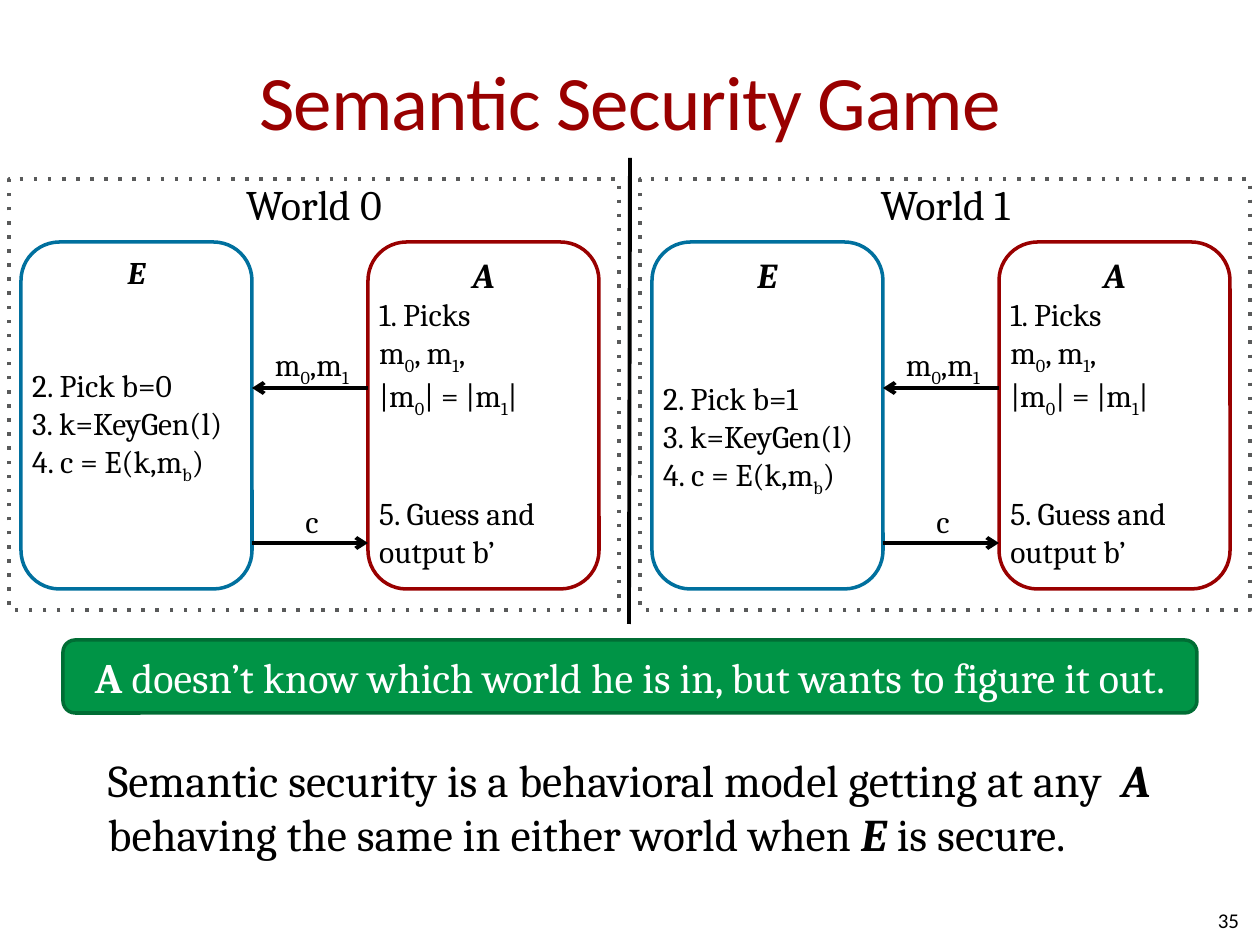
import pptx
import pptx.util
import pptx.dml.color
import pptx.enum.shapes
import pptx.enum.text
import pptx.oxml
import pptx.oxml.ns

SCALE = 914400 / 126
SIZE = (1260, 945)
SHAPE = pptx.enum.shapes.MSO_SHAPE
ALIGN = pptx.enum.text.PP_ALIGN
ANCHOR = pptx.enum.text.MSO_ANCHOR
LEFT, MID, RIGHT = ALIGN.LEFT, ALIGN.CENTER, ALIGN.RIGHT

BLACK, RED, BLUE, GRAY = "000000", "990000", "00709E", "595A5A"
GREEN, EDGE, WHITE = "009446", "006D34", "FFFFFF"

TITLE = "Semantic Security Game"
CLAIM = "*A* doesn’t know which world he is in, but wants to figure it out."
MODEL = ("Semantic security is a behavioral model getting at any  *A* "
         "behaving the same in either world when *E* is secure.")
NUMBER = "35"

# Marks: _subscript_ and *bold italic*.
WORLDS = [
    dict(name="World 0", bit="2. Pick b=0", size=18, gap=43),
    dict(name="World 1", bit="2. Pick b=1", size=20, gap=48),
]
STEPS = ["3. k=KeyGen(l)", "4. c = E(k,m_b_)"]
PICKS = "1. Picks\nm_0_, m_1_,\n|m_0_| = |m_1_|"
GUESS = "5. Guess and output b’"
PAIR, CIPHER = "m_0_,m_1_", "c"

STEP = 631
FRAME = (9, 179, 610, 431)
BOX_E = (21, 242, 231, 347)
BOX_A = (368, 242, 231, 347)
SEND, REPLY = 388, 543


def px(n):
    return pptx.util.Emu(round(n * SCALE))


def rgb(code):
    return pptx.dml.color.RGBColor.from_string(code)


def node(tag):
    return pptx.oxml.parse_xml(f"<a:{tag} {pptx.oxml.ns.nsdecls('a')}/>")


def detail(shape, tag, key, val):
    item = node(tag)
    item.set(key, val)
    shape._element.spPr.find(pptx.oxml.ns.qn("a:ln")).append(item)


def add_runs(para, text, size, color, font):
    for i, part in enumerate(text.split("_")):
        for j, bit in enumerate(part.split("*")):
            for k, row in enumerate(bit.split("\n")):
                if k:
                    para.add_line_break()
                if not row:
                    continue
                run = para.add_run()
                run.text = row
                run.font.name = font
                run.font.size = pptx.util.Pt(size)
                run.font.color.rgb = rgb(color)
                run.font.bold = run.font.italic = j % 2 == 1
                if i % 2:
                    run.font._element.set("baseline", "-25000")


def put(shape, rows, color=BLACK, font="Cambria", anchor=ANCHOR.TOP,
        inset=(0, 0), wrap=True):
    frame = shape.text_frame
    frame.word_wrap = wrap
    frame.vertical_anchor = anchor
    frame.margin_left = frame.margin_right = px(inset[0])
    frame.margin_top = frame.margin_bottom = px(inset[1])
    for n, (text, size, align, gap) in enumerate(rows):
        para = frame.add_paragraph() if n else frame.paragraphs[0]
        para.alignment = align
        para.space_before = pptx.util.Pt(gap)
        add_runs(para, text, size, color, font)
    return frame


def add_box(slide, kind, area, edge, fill=None):
    box = slide.shapes.add_shape(kind, *map(px, area))
    box.shadow.inherit = False
    if fill:
        box.fill.solid()
        box.fill.fore_color.rgb = rgb(fill)
    else:
        box.fill.background()
    box.line.color.rgb = rgb(edge)
    box.line.width = pptx.util.Pt(2)
    return box


def add_text(slide, area, rows, **opts):
    return put(slide.shapes.add_textbox(*map(px, area)), rows, **opts)


def add_line(slide, x1, y1, x2, y2, arrow=True):
    line = slide.shapes.add_connector(
        pptx.enum.shapes.MSO_CONNECTOR.STRAIGHT, *map(px, (x1, y1, x2, y2)))
    line.line.color.rgb = rgb(BLACK)
    line.line.width = pptx.util.Pt(2.25)
    if arrow:
        detail(line, "tailEnd", "type", "arrow")
    line._element.spPr.append(node("effectLst"))


def add_world(slide, world, dx):
    def move(area):
        return (area[0] + dx, *area[1:])

    box = add_box(slide, SHAPE.ROUNDED_RECTANGLE, move(BOX_E), BLUE, WHITE)
    put(box, [("*E*", world["size"], MID, 0),
              (world["bit"], 18, LEFT, world["gap"])]
        + [(step, 18, LEFT, 0) for step in STEPS])
    box = add_box(slide, SHAPE.ROUNDED_RECTANGLE, move(BOX_A), RED, WHITE)
    put(box, [("*A*", 20, MID, 0), (PICKS, 18, LEFT, 0),
              (GUESS, 18, LEFT, 43)])

    near, far = BOX_E[0] + BOX_E[2] + dx, BOX_A[0] + dx
    add_line(slide, far, SEND, near, SEND)
    add_text(slide, move((262, 339, 126, 73)), [(PAIR, 18, LEFT, 0)],
             inset=(13, 6), wrap=False)
    add_line(slide, near, REPLY, far, REPLY)
    add_text(slide, move((249, 496, 126, 53)), [(CIPHER, 18, MID, 0)],
             inset=(13, 6), wrap=False)

    frame = add_box(slide, SHAPE.RECTANGLE, move(FRAME), GRAY)
    detail(frame, "prstDash", "val", "dot")
    put(frame, [(world["name"], 24, MID, 0)])


def main():
    deck = pptx.Presentation()
    deck.slide_width, deck.slide_height = map(px, SIZE)
    slide = deck.slides.add_slide(deck.slide_layouts[6])

    title = add_text(slide, (63, 21, 1134, 158), [(TITLE, 44, MID, 0)],
                     color=RED, font="Calibri", anchor=ANCHOR.MIDDLE,
                     inset=(0, 6))
    title.paragraphs[0].runs[0].font._element.set("spc", "-50")
    add_text(slide, (945, 895, 294, 50), [(NUMBER, 12, RIGHT, 0)],
             font="Calibri", anchor=ANCHOR.MIDDLE)

    for n, world in enumerate(WORLDS):
        add_world(slide, world, n * STEP)
    add_line(slide, 630, 158, 629, 624, arrow=False)

    bar = add_box(slide, SHAPE.ROUNDED_RECTANGLE, (63, 640, 1134, 73),
                  EDGE, GREEN)
    claim = put(bar, [(CLAIM, 24, MID, 0)], color=WHITE, anchor=ANCHOR.MIDDLE)
    claim.paragraphs[0].runs[0].font.italic = False
    add_text(slide, (95, 746, 1071, 136), [(MODEL, 25.9, LEFT, 0)],
             inset=(13, 6))
    deck.save("out.pptx")


if __name__ == "__main__":
    main()
